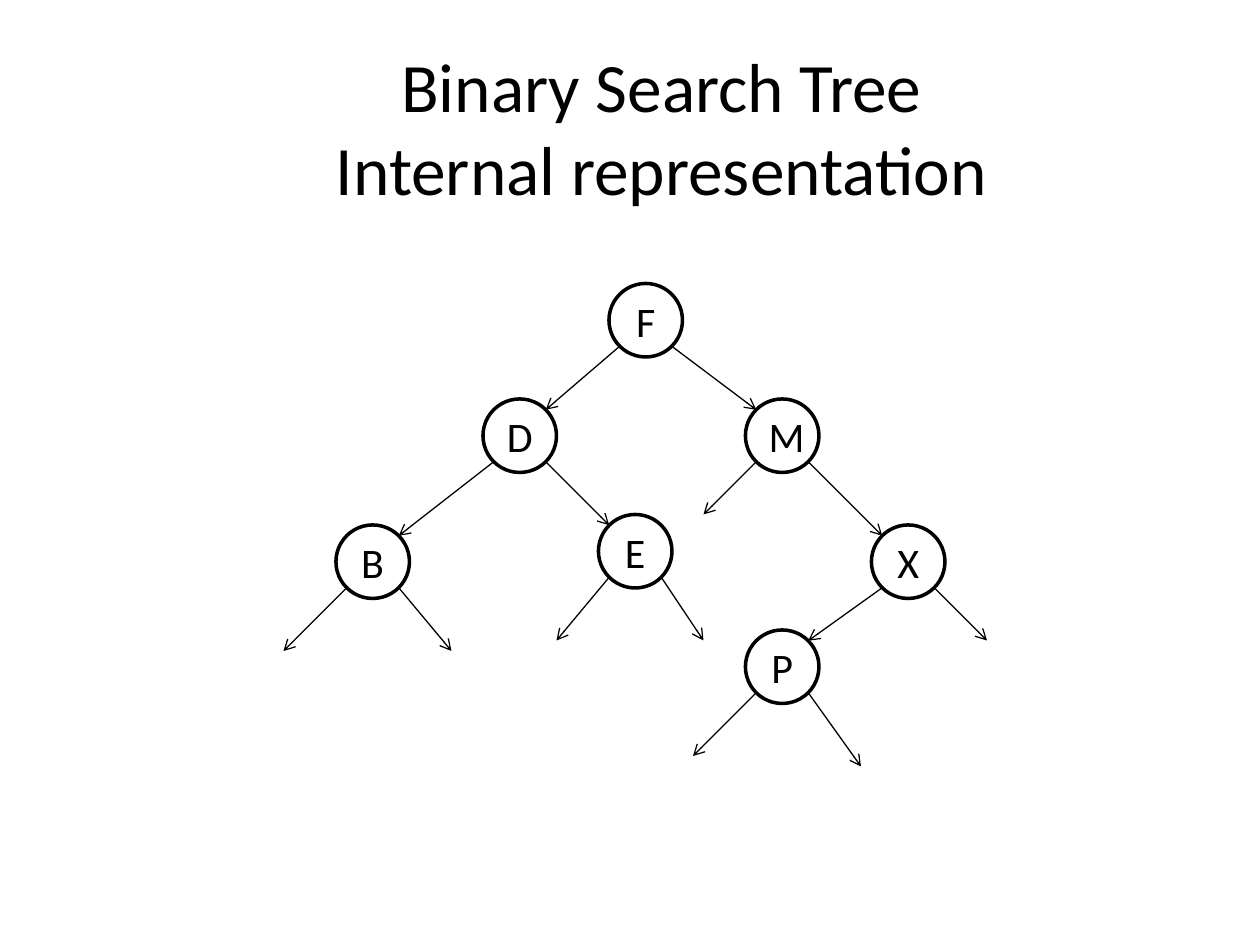
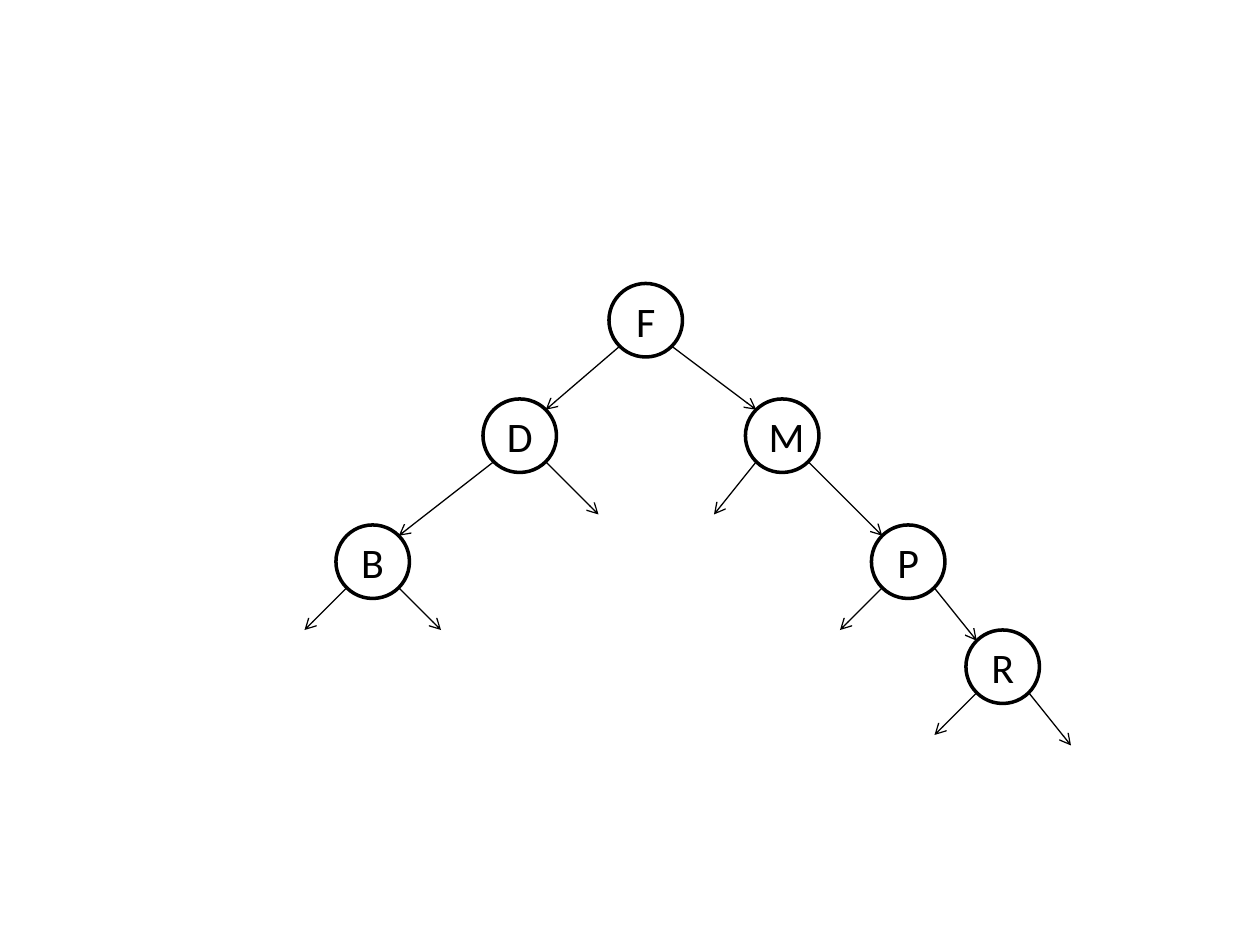
from lxml import etree
from pptx import Presentation
from pptx.dml.color import RGBColor
from pptx.enum.shapes import MSO_CONNECTOR as CONN, MSO_SHAPE as SHAPE
from pptx.enum.text import MSO_ANCHOR as ANCHOR, MSO_AUTO_SIZE as AUTO, PP_ALIGN as ALIGN
from pptx.oxml.ns import qn
from pptx.util import Pt

TITLE_ONLY, BLANK = 5, 6


def color(value):
    return RGBColor.from_string(value)


class Deck:
    font, ink, paper = "Calibri", "000000", "FFFFFF"
    title_size, node_size = 39.6, 24
    diameter = 42
    near = diameter * (1 - 0.5 ** 0.5) / 2
    far = diameter - near

    def __init__(self):
        self.prs = Presentation()
        self.prs.slide_width, self.prs.slide_height = Pt(720), Pt(540)

    def add_slide(self, layout):
        self.s = self.prs.slides.add_slide(self.prs.slide_layouts[layout])
        fill = self.s.background.fill
        fill.solid()
        fill.fore_color.rgb = color(self.paper)

    def run(self, p, text, size):
        r = p.add_run()
        r.text = text
        r.font.name, r.font.size = self.font, Pt(size)
        r.font.color.rgb = color(self.ink)

    def centered(self, sp):
        tf = sp.text_frame
        tf.vertical_anchor = ANCHOR.MIDDLE
        p = tf.paragraphs[0]
        p.alignment = ALIGN.CENTER
        return p

    def title(self, *lines):
        sp = self.s.shapes.title
        sp.left, sp.top, sp.width, sp.height = Pt(54), Pt(18), Pt(648), Pt(108)
        sp.text_frame.auto_size = AUTO.NONE
        p = self.centered(sp)
        for i, line in enumerate(lines):
            if i:
                p.add_line_break()
            self.run(p, line, self.title_size)

    def node(self, letter, x, y):
        sp = self.s.shapes.add_shape(SHAPE.OVAL, Pt(x), Pt(y), Pt(self.diameter), Pt(self.diameter))
        sp.shadow.inherit = False
        sp.fill.solid()
        sp.fill.fore_color.rgb = color(self.paper)
        sp.line.color.rgb = color(self.ink)
        sp.line.width = Pt(2)
        self.run(self.centered(sp), letter, self.node_size)

    def arrow(self, start, end):
        c = self.s.shapes.add_connector(CONN.STRAIGHT, *(Pt(v) for v in start + end))
        c.line.color.rgb = color(self.ink)
        c.line.width = Pt(0.75)
        etree.SubElement(c.line._get_or_add_ln(), qn("a:tailEnd"), type="arrow")
        etree.SubElement(c._element.spPr, qn("a:effectLst"))

    def tree(self, nodes):
        for letter, (x, y, *_) in nodes.items():
            self.node(letter, x, y)
        for x, y, left, right in nodes.values():
            self.branch((x + self.near, y + self.far), left, self.far, nodes)
            self.branch((x + self.far, y + self.far), right, self.near, nodes)

    def branch(self, start, target, entry, nodes):
        if target in nodes:
            x, y = nodes[target][:2]
            target = x + entry, y + self.near
        self.arrow(start, target)


FULL_TREE = {
    "F": (348, 162, "D", "M"),
    "M": (426, 228, (402, 294), "X"),
    "X": (498, 300, "P", (564, 366)),
    "P": (426, 360, (396, 432), (492, 438)),
    "D": (276, 228, "B", "E"),
    "B": (192, 300, (162, 372), (258, 372)),
    "E": (342, 294, (318, 366), (402, 366)),
}
CHANGED_TREE = {
    "F": FULL_TREE["F"],
    "M": (426, 228, (408, 294), "P"),
    "P": (498, 300, (480, 360), "R"),
    "D": (276, 228, "B", (342, 294)),
    "B": (192, 300, (174, 360), (252, 360)),
    "R": (552, 360, (534, 420), (612, 426)),
}


def main():
    deck = Deck()
    deck.add_slide(TITLE_ONLY)
    deck.title("Binary Search Tree", "Internal representation")
    deck.tree(FULL_TREE)
    deck.add_slide(BLANK)
    deck.tree(CHANGED_TREE)
    deck.prs.save("out.pptx")


if __name__ == "__main__":
    main()
